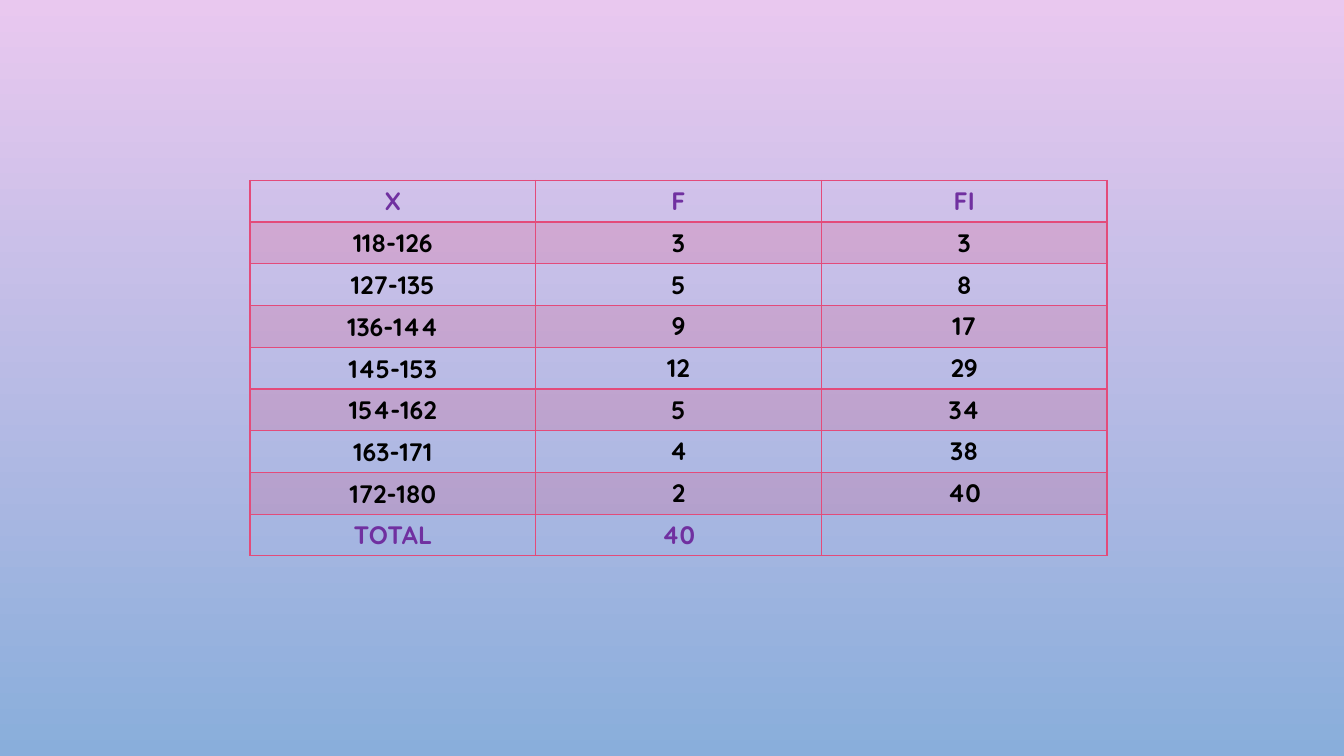
from lxml import etree
from pptx import Presentation
from pptx.dml.color import RGBColor
from pptx.enum.text import MSO_ANCHOR, PP_ALIGN
from pptx.oxml.ns import qn
from pptx.util import Inches, Pt

CENTER = PP_ALIGN.CENTER
MIDDLE = MSO_ANCHOR.MIDDLE
BLANK_LAYOUT = 6
NO_STYLE = "{2D5ABB26-0587-4C30-8999-92F81FD0307C}"

ROWS = [
    ("X", "F", "FI"),
    ("118-126", "3", "3"),
    ("127-135", "5", "8"),
    ("136-144", "9", "17"),
    ("145-153", "12", "29"),
    ("154-162", "5", "34"),
    ("163-171", "4", "38"),
    ("172-180", "2", "40"),
    ("TOTAL", "40", ""),
]
COLORS = {
    "top": "E9C8EF",
    "bottom": "89AEDB",
    "pink": "E34B7A",
    "purple": "7030A0",
    "black": "000000",
}
LEFT, TOP, WIDTH, HEIGHT = 2.48, 1.79, 8.5, 3.65
BAND_OPACITY = 20
FONT = {"name": "Quicksand", "size": Pt(18), "bold": True}
INTERVAL_CELL = {
    "vertical_anchor": MIDDLE,
    "margin_left": Inches(0.01),
    "margin_top": Inches(0.01),
    "margin_right": Inches(0.01),
    "margin_bottom": 0,
}


def set_attributes(target, values):
    for name, value in values.items():
        setattr(target, name, value)


def rgb(name):
    return RGBColor.from_string(COLORS[name])


def paint_background(page):
    fill = page.background.fill
    fill.gradient()
    fill.gradient_angle = 270
    for stop, name in zip(fill.gradient_stops, ("top", "bottom")):
        stop.color.rgb = rgb(name)


def fill_cell(cell, banded):
    if not banded:
        cell.fill.background()
        return
    cell.fill.solid()
    cell.fill.fore_color.rgb = rgb("pink")
    color = cell._tc.tcPr.find(".//" + qn("a:srgbClr"))
    etree.SubElement(color, qn("a:alpha"), val=str(BAND_OPACITY * 1000))


def add_borders(cell, widths):
    """Put the four lines ahead of the cell's fill, as the schema orders them."""
    properties = cell._tc.get_or_add_tcPr()
    for position, (side, width) in enumerate(widths.items()):
        line = etree.Element(qn("a:ln" + side), w=str(Pt(width)))
        solid = etree.SubElement(line, qn("a:solidFill"))
        etree.SubElement(solid, qn("a:srgbClr"), val=COLORS["pink"])
        properties.insert(position, line)


def write_cell(cell, text, color):
    para = cell.text_frame.paragraphs[0]
    para.alignment = CENTER
    if text:
        span = para.add_run()
        span.text = text
        set_attributes(span.font, FONT)
        span.font.color.rgb = rgb(color)


def add_frequency_table(page):
    frame = page.shapes.add_table(
        len(ROWS), len(ROWS[0]),
        Inches(LEFT), Inches(TOP), Inches(WIDTH), Inches(HEIGHT))
    table = frame.table
    table._tbl.tblPr.find(qn("a:tableStyleId")).text = NO_STYLE
    last = len(ROWS) - 1
    for row, values in enumerate(ROWS):
        is_interval = 0 < row < last
        for column, text in enumerate(values):
            cell = table.cell(row, column)
            if is_interval and column == 0:
                set_attributes(cell, INTERVAL_CELL)
            fill_cell(cell, row % 2 == 1)
            add_borders(cell, {
                "L": 1,
                "R": 1,
                "T": 2 if row == 1 else 1,
                "B": 2 if row == 0 else 1,
            })
            write_cell(cell, text, "black" if is_interval else "purple")


def main():
    deck = Presentation()
    deck.slide_width, deck.slide_height = Inches(13.33), Inches(7.5)
    page = deck.slides.add_slide(deck.slide_layouts[BLANK_LAYOUT])
    paint_background(page)
    add_frequency_table(page)
    deck.save("out.pptx")


if __name__ == "__main__":
    main()
